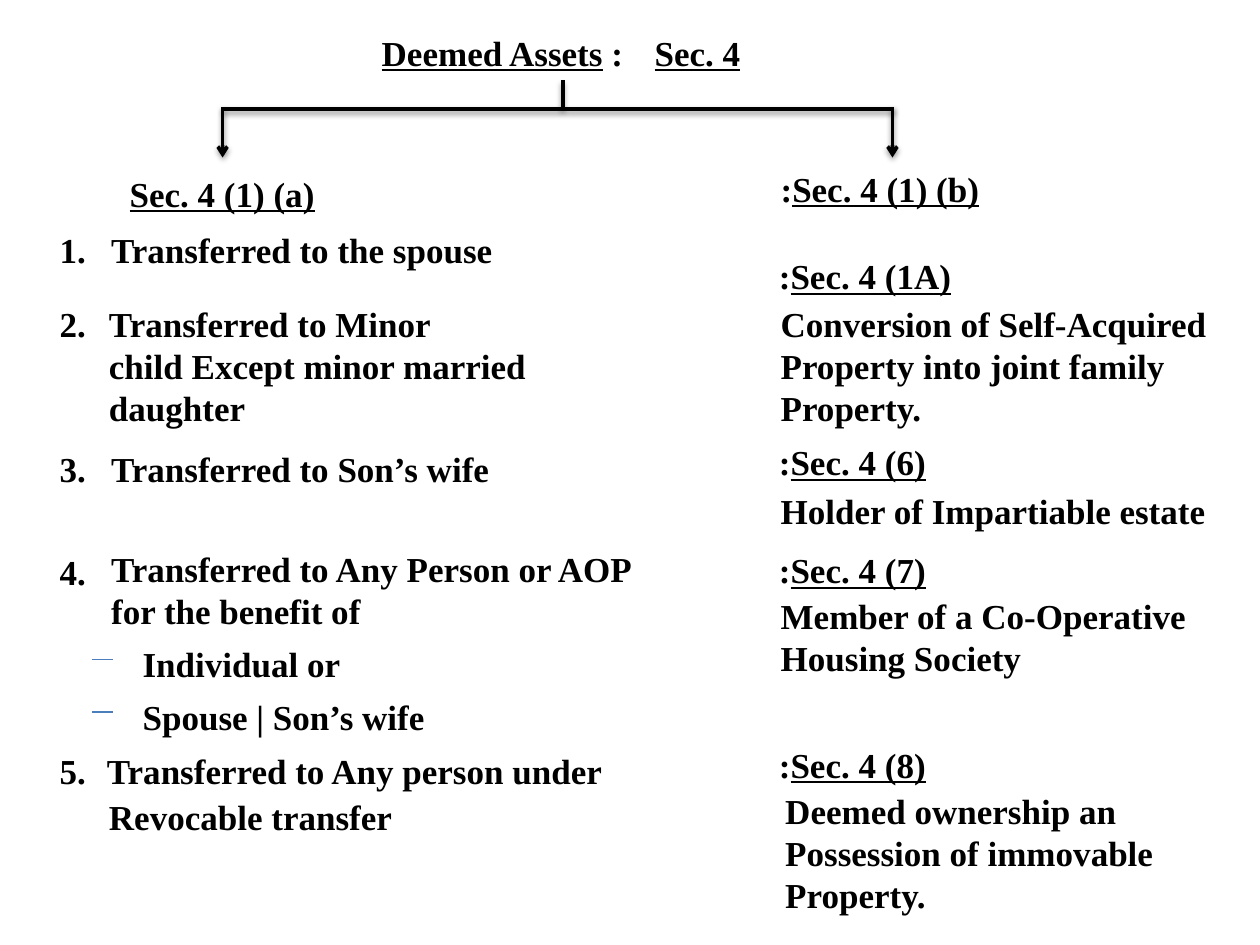
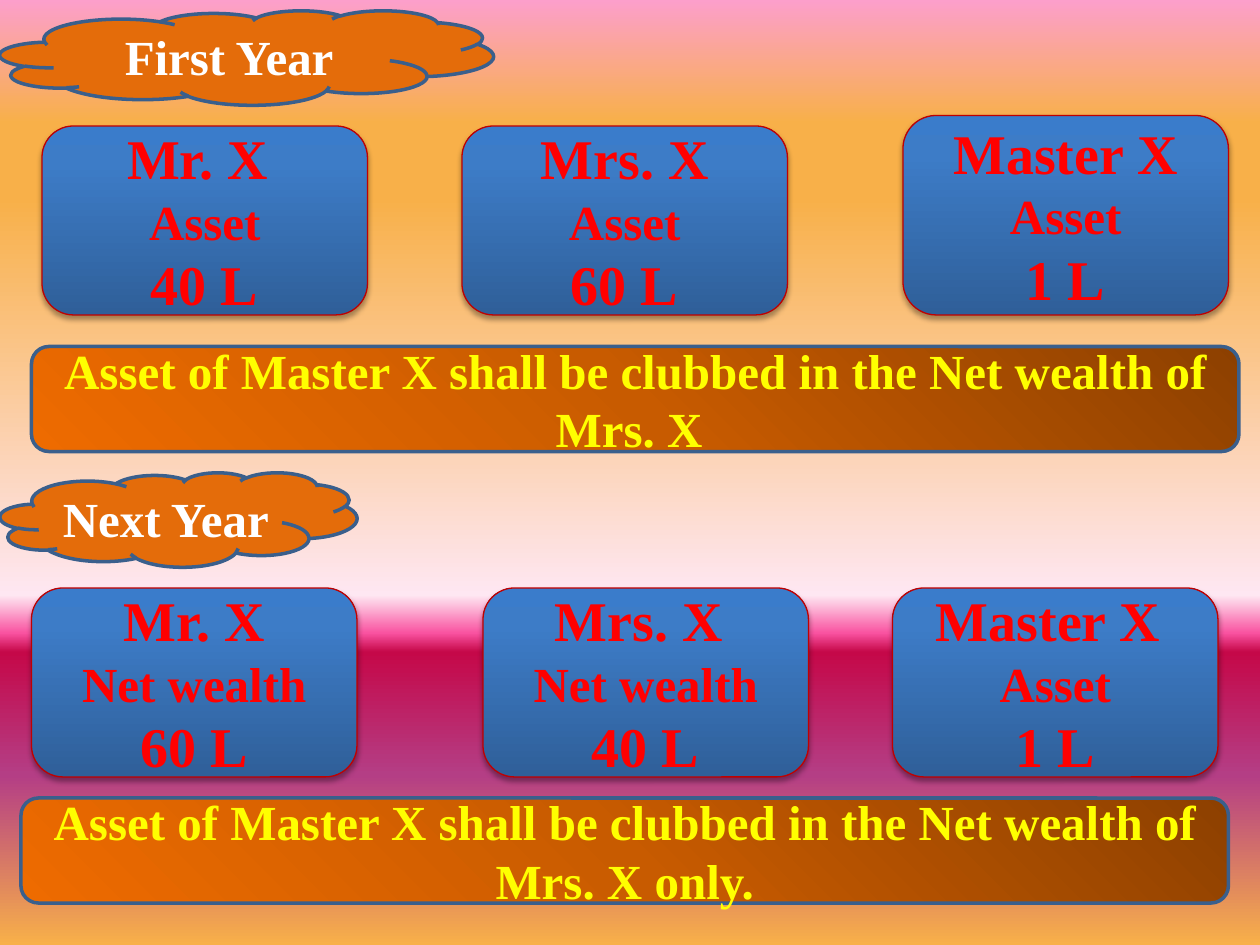
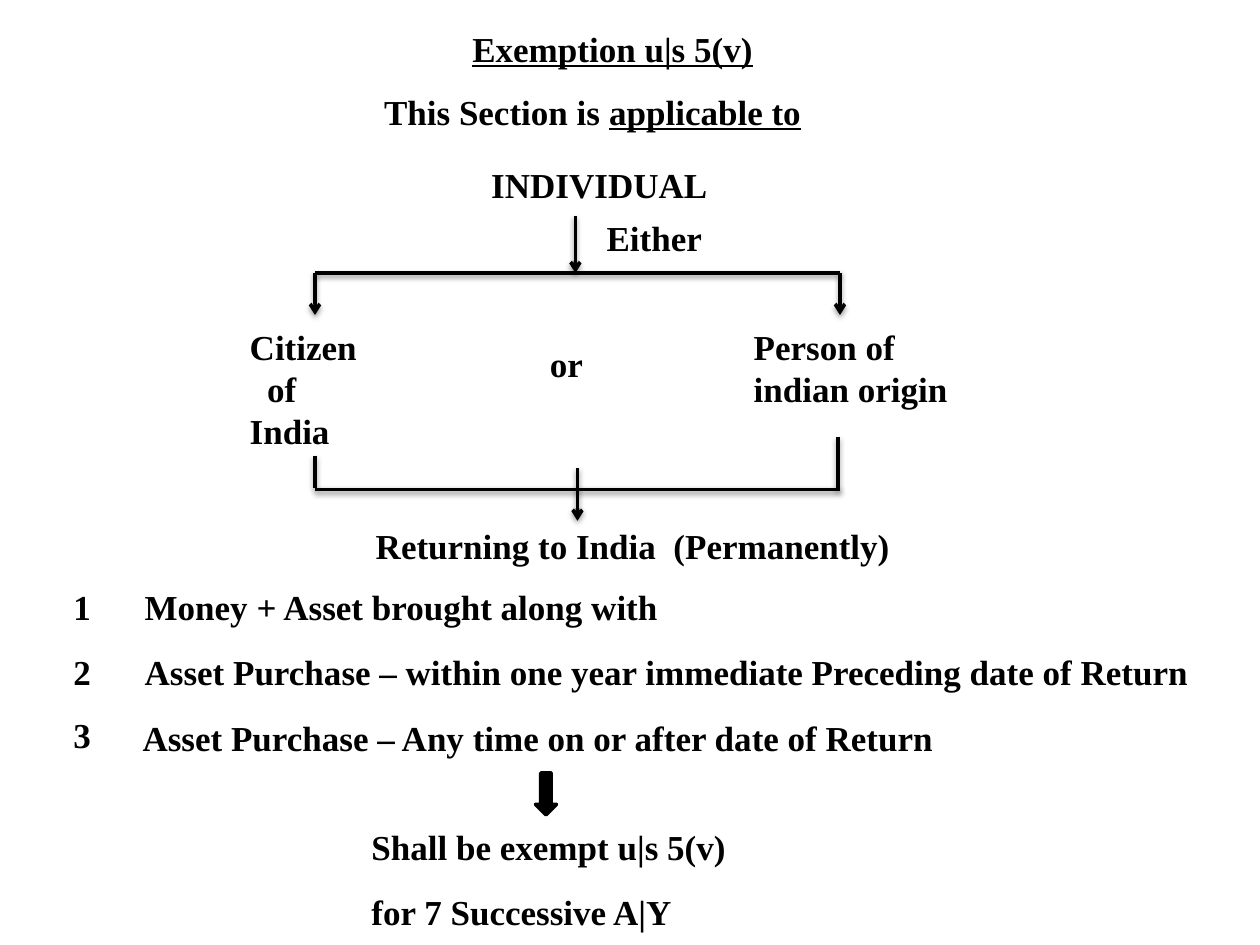
from pptx import Presentation
from pptx import util as u
from pptx.dml import color
from pptx.enum import shapes, text
from pptx.oxml import ns, xmlchemy

RGB = color.RGBColor
BLACK = RGB(0x00, 0x00, 0x00)
WHITE = RGB(0xFF, 0xFF, 0xFF)
YELLOW = RGB(0xFF, 0xFF, 0x00)
RED = RGB(0xFF, 0x00, 0x00)
DARK_RED = RGB(0xC0, 0x00, 0x00)
ORANGE = RGB(0xE4, 0x6C, 0x0A)
OUTLINE_BLUE = RGB(0x3A, 0x5F, 0x8C)
DASH_BLUE = RGB(0x4B, 0x7E, 0xBC)

# Gradients: (position in percent, colour)
SUNSET = [(0, RGB(0xFC, 0x9F, 0xCB)), (13, RGB(0xF8, 0xB0, 0x49)),
          (21, RGB(0xF8, 0xB0, 0x49)), (63, RGB(0xFE, 0xE7, 0xF2)),
          (67, RGB(0xF9, 0x52, 0xA0)), (69, RGB(0xC5, 0x08, 0x49)),
          (82, RGB(0xB4, 0x3E, 0x85)), (100, RGB(0xF8, 0xB0, 0x49))]
RUST = [(0, RGB(0x8D, 0x40, 0x00)), (50, RGB(0xC8, 0x5B, 0x00)),
        (100, RGB(0xEE, 0x6B, 0x00))]
BLUE = [(0, RGB(0x2F, 0x5F, 0x99)), (80, RGB(0x3D, 0x7C, 0xC7)),
        (100, RGB(0x3A, 0x7C, 0xCB))]

FONT = "Times New Roman"
BODY_SIZE = 20
LINE_HEIGHT = 24
ROUNDED = shapes.MSO_SHAPE.ROUNDED_RECTANGLE
CLOUD = shapes.MSO_SHAPE.CLOUD


def add_xml(parent, tag, **attributes):
    child = xmlchemy.OxmlElement(tag)
    for key, value in attributes.items():
        child.set(key, str(value))
    parent.append(child)
    return child


class Deck:
    def __init__(self):
        self.prs = Presentation()
        self.prs.slide_width, self.prs.slide_height = u.Pt(720), u.Pt(540)
        self.slide = None

    def new_slide(self):
        self.slide = self.prs.slides.add_slide(self.prs.slide_layouts[6])

    def gradient(self, fill, owner, stops, angle):
        """Fill with the stops; the angle runs anticlockwise."""
        fill.gradient()
        fill.gradient_angle = angle
        stop_list = owner.element.xpath(".//a:gsLst")[0]
        for old in list(stop_list):
            stop_list.remove(old)
        for percent, rgb in stops:
            stop = add_xml(stop_list, "a:gs", pos=percent * 1000)
            add_xml(stop, "a:srgbClr", val=rgb)

    def background(self, stops, angle):
        self.gradient(self.slide.background.fill, self.slide, stops, angle)

    def shadow(self, effects, distance, opacity):
        outer = add_xml(effects, "a:outerShdw", blurRad=u.Pt(3.1),
                        dist=u.Pt(distance), dir=5400000, rotWithShape=0)
        black = add_xml(outer, "a:srgbClr", val=BLACK)
        add_xml(black, "a:alpha", val=opacity * 1000)

    def style(self, paragraph, size, rgb):
        font = paragraph.font
        font.name, font.size, font.bold = FONT, u.Pt(size), True
        font.color.rgb = rgb

    def label(self, left, top, width, *paragraphs, lines=None, indents=()):
        """Body text; words between underscores are underlined."""
        height = 7.5 + LINE_HEIGHT * (lines or len(paragraphs))
        box = self.slide.shapes.add_textbox(
            u.Pt(left), u.Pt(top), u.Pt(width), u.Pt(height))
        frame = box.text_frame
        frame.word_wrap = True
        frame.auto_size = text.MSO_AUTO_SIZE.SHAPE_TO_FIT_TEXT
        for i, words in enumerate(paragraphs):
            paragraph = frame.add_paragraph() if i else frame.paragraphs[0]
            self.style(paragraph, BODY_SIZE, BLACK)
            for j, part in enumerate(words.split("_")):
                if part:
                    run = paragraph.add_run()
                    run.text = part
                    if j % 2:
                        run.font.underline = True
        for i, indent in indents:
            properties = frame.paragraphs[i]._p.get_or_add_pPr()
            properties.set("marL", str(u.Pt(indent)))

    def line(self, x1, y1, x2, y2, arrow=False, rgb=BLACK, width=2,
             shadow=True):
        line = self.slide.shapes.add_connector(
            shapes.MSO_CONNECTOR.STRAIGHT,
            u.Pt(x1), u.Pt(y1), u.Pt(x2), u.Pt(y2))
        line.line.color.rgb = rgb
        line.line.width = u.Pt(width)
        properties = line.element.spPr
        if arrow:
            add_xml(properties.find(ns.qn("a:ln")), "a:tailEnd", type="arrow")
        effects = add_xml(properties, "a:effectLst")
        if shadow:
            self.shadow(effects, 1.6, 38)

    def shape(self, kind, left, top, width, height, fill, outline,
              line_width=2, rows=(), rgb=WHITE, angle=0, shadow=False):
        """Preset shape; a list as fill is a gradient, rows are (text, size)."""
        shape = self.slide.shapes.add_shape(
            kind, u.Pt(left), u.Pt(top), u.Pt(width), u.Pt(height))
        if isinstance(fill, list):
            self.gradient(shape.fill, shape, fill, angle)
        else:
            shape.fill.solid()
            shape.fill.fore_color.rgb = fill
        shape.line.color.rgb = outline
        shape.line.width = u.Pt(line_width)
        shape.shadow.inherit = False
        if shadow:
            self.shadow(shape.element.xpath("p:spPr/a:effectLst")[0], 1.8, 35)
        frame = shape.text_frame
        frame.word_wrap = True
        frame.vertical_anchor = text.MSO_ANCHOR.MIDDLE
        for i, (words, size) in enumerate(rows):
            paragraph = frame.add_paragraph() if i else frame.paragraphs[0]
            paragraph.text = words
            paragraph.alignment = text.PP_ALIGN.CENTER
            self.style(paragraph, size, rgb)

    def strip(self, left, top, words):
        self.shape(ROUNDED, left, top, 690, 60, RUST, OUTLINE_BLUE,
                   rows=[(words, 28)], rgb=YELLOW, angle=225)

    def year(self, top, width, words):
        self.shape(CLOUD, 0, top, width, 54, ORANGE, OUTLINE_BLUE,
                   rows=[(words, 28)])

    def person(self, left, top, height, name, measure, amount):
        self.shape(ROUNDED, left, top, 186, height, BLUE, DARK_RED, 0.75,
                   rows=[(name, 32), (measure, 28), (amount, 32)],
                   rgb=RED, angle=90, shadow=True)


def deemed_assets(deck):
    deck.new_slide()
    # Title and branching lines
    deck.label(211, 14.4, 156, "_Deemed Assets_ :")
    deck.label(367, 14.4, 84, "_Sec. 4_")
    deck.line(321.6, 46, 321.6, 62.4)
    deck.line(127.2, 62.4, 511, 62.4)
    for branch in (127.2, 510):
        deck.line(branch, 61.2, branch, 90, arrow=True)

    # Section 4 (1) (a): numbered transfers
    deck.label(67, 95, 144, "_Sec. 4 (1) (a)_")
    transfers = [
        (127.2, 127.2, 56.4, 250, ["Transferred to the spouse"]),
        (169.2, 169.2, 55.2, 281, ["Transferred to Minor",
                                   "child Except minor married",
                                   "daughter"]),
        (252, 252, 56.4, 256, ["Transferred to Son’s wife"]),
        (311, 309.6, 56.4, 322, ["Transferred to Any Person or AOP",
                                 "for the benefit of"]),
        (424.8, 424.8, 54, 336, ["Transferred to Any person under"]),
    ]
    for number, (number_top, top, left, width, words) in enumerate(transfers, 1):
        deck.label(27, number_top, 36, f"{number}.")
        deck.label(left, top, width, *words)
    deck.label(55.2, 451.2, 216, "Revocable transfer")
    for top, beneficiary in ((363.6, "Individual or"),
                             (393.6, "Spouse | Son’s wife")):
        deck.label(74.4, top, 180, beneficiary)
        deck.line(52.8, top + 13.2, 64.8, top + 13.2,
                  rgb=DASH_BLUE, width=0.75, shadow=False)

    # Other sections
    for left, top, section in ((439, 92, "(1) (b)"), (438, 142, "(1A)"),
                               (438, 248.4, "(6)"), (438, 310, "(7)"),
                               (438, 421.2, "(8)")):
        deck.label(left, top, 144, f":_Sec. 4 {section}_")
    deck.label(439, 169.2, 264,
               "Conversion of Self-Acquired Property into joint family",
               "Property.", lines=3)
    deck.label(439, 276, 264, "Holder of Impartiable estate")
    deck.label(439, 336, 264, "Member of a Co-Operative", "Housing Society")
    deck.label(441.6, 447.6, 228, "Deemed ownership an",
               "Possession of immovable", "Property.")


def clubbing_example(deck):
    deck.new_slide()
    deck.background(SUNSET, 270)
    # Conclusions
    clubbed = "Asset of Master X shall be clubbed in the Net wealth of Mrs. X "
    deck.strip(18, 198, clubbed)
    deck.strip(12, 456, clubbed + "only.")
    # Years
    deck.year(6, 282, "First Year")
    deck.year(270, 204, "Next Year")
    # First year's holdings
    deck.person(24, 72, 108, "Mr. X ", "Asset", "40 L")
    deck.person(264, 72, 108, "Mrs. X", "Asset", "60 L")
    deck.person(516, 66, 114, "Master X", "Asset", "1 L")
    # Next year's holdings
    deck.person(18, 336, 108, "Mr. X", "Net wealth", "60 L")
    deck.person(276, 336, 108, "Mrs. X ", "Net wealth", "40 L")
    deck.person(510, 336, 108, "Master X ", "Asset", "1 L")


def exemption(deck):
    deck.new_slide()
    # Heading
    deck.label(262.8, 12, 207, "_Exemption u|s 5(v)_")
    deck.label(212.4, 48, 268, "This Section is _applicable to_")
    deck.label(273.6, 90, 171, "INDIVIDUAL")

    # Either one or the other
    left_branch, right_branch = 180, 480
    deck.line(328.8, 123.6, 328.8, 156, arrow=True)
    deck.label(339.6, 120, 91, "Either")
    deck.line(left_branch, 156, right_branch, 156)
    for branch in (left_branch, right_branch):
        deck.line(branch, 156, branch, 180, arrow=True)
    deck.label(135.6, 182.4, 104, "Citizen", "of", "India", indents=[(1, 10)])
    deck.label(307.2, 192, 42, "or")
    deck.label(423.6, 182.4, 134, "Person of indian origin", lines=3)

    # Joining again
    deck.line(left_branch, 279.6, right_branch, 279.6)
    deck.line(left_branch, 260.4, left_branch, 278.6)
    deck.line(478.8, 249.6, 478.8, 279.6)
    deck.line(330, 267.6, 330, 297.6, arrow=True)
    deck.label(207.6, 296.4, 315, "Returning to India  (Permanently)")

    # Exempt assets
    assets = [
        (331.2, 331.2, 75.6, "Money + Asset brought along with"),
        (368.4, 368.4, 75.6, "Asset Purchase – within one year immediate "
                             "Preceding date of Return"),
        (404.4, 405.6, 74.4, "Asset Purchase – Any time on or after date "
                             "of Return"),
    ]
    for number, (number_top, top, left, words) in enumerate(assets, 1):
        deck.label(34.8, number_top, 30, str(number))
        deck.label(left, top, 621, words)

    # Result
    deck.shape(shapes.MSO_SHAPE.DOWN_ARROW, 306, 441.6, 12, 24, BLACK, BLACK)
    deck.label(205.2, 468, 221, "Shall be exempt u|s 5(v)")
    deck.label(205.2, 505.2, 221, "for 7 Successive A|Y")


def main():
    deck = Deck()
    deemed_assets(deck)
    clubbing_example(deck)
    exemption(deck)
    deck.prs.save("out.pptx")


if __name__ == "__main__":
    main()
